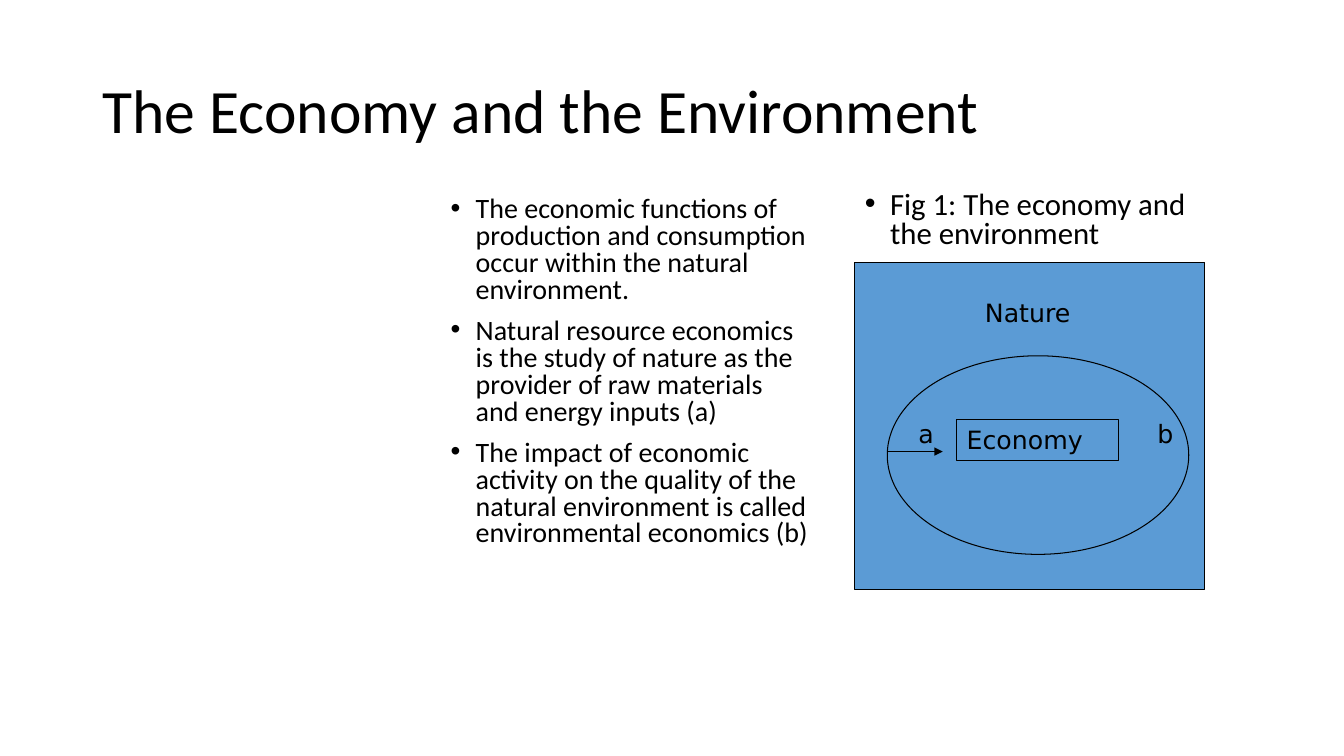
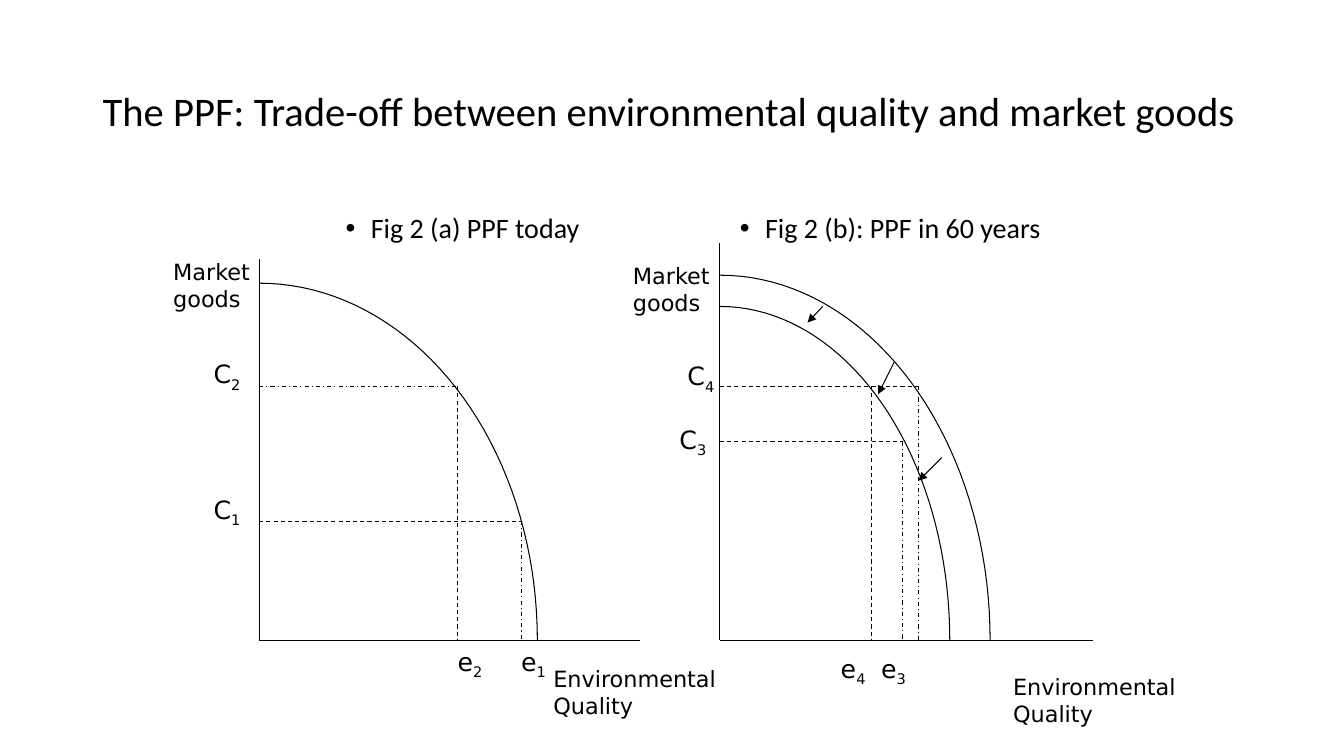
from math import cos, pi, sin

from lxml.etree import SubElement
from pptx import Presentation
from pptx.dml.color import RGBColor
from pptx.enum.dml import MSO_LINE
from pptx.enum.shapes import MSO_CONNECTOR, MSO_SHAPE
from pptx.enum.text import MSO_ANCHOR
from pptx.oxml.ns import qn
from pptx.util import Inches, Pt

BLACK = RGBColor(0x00, 0x00, 0x00)
BLUE = RGBColor(0x5B, 0x9B, 0xD5)
THIN = Pt(0.75)
DASH, DOT = MSO_LINE.DASH, MSO_LINE.DASH_DOT

TITLE = {"font": {"name": "Calibri"}, "para": {"line_spacing": 0.9}}
LABEL = {"font": {"name": "DejaVu Sans"}, "para": {}}
LOOSE = {"font": {"name": "Calibri"}, "bullet": True,
         "para": {"line_spacing": 0.9, "space_before": Pt(10)}}
TIGHT = {**LOOSE, "para": {**LOOSE["para"], "line_spacing": 0.8}}


def write(page, at, lines, size, style=LABEL, wrap=True):
    """Add a text box; an underscore in a line starts a subscript."""
    box = page.shapes.add_textbox(*map(Inches, at))
    frame = box.text_frame
    frame.word_wrap = wrap
    for i, line in enumerate(lines):
        para = frame.add_paragraph() if i else frame.paragraphs[0]
        for key, value in style["para"].items():
            setattr(para, key, value)
        if style.get("bullet"):
            props = para._p.get_or_add_pPr()
            props.set("marL", str(Inches(0.25)))
            props.set("indent", str(-Inches(0.25)))
            SubElement(props, qn("a:buFont")).set("typeface", "Arial")
            SubElement(props, qn("a:buChar")).set("char", "•")
        for j, part in enumerate(line.split("_")):
            run = para.add_run()
            run.text = part
            for key, value in {**style["font"], "size": Pt(size)}.items():
                setattr(run.font, key, value)
            run.font.color.rgb = BLACK
            if j:
                run._r.get_or_add_rPr().set("baseline", "-25000")
    return box


def rule(page, x1, y1, x2, y2, dash=None, arrow=False):
    """Draw a thin straight line, dashed or with an arrowhead if asked."""
    line = page.shapes.add_connector(
        MSO_CONNECTOR.STRAIGHT, *map(Inches, (x1, y1, x2, y2)))
    line.line.color.rgb = BLACK
    line.line.width = THIN
    if dash:
        line.line.dash_style = dash
    if arrow:
        SubElement(line.line._get_or_add_ln(), qn("a:tailEnd")).set("type", "triangle")
    SubElement(line._element.spPr, qn("a:effectLst"))


deck = Presentation()
deck.slide_width, deck.slide_height = Inches(13.33), Inches(7.5)

pages = []
for text, size in (
    ("The Economy and the Environment", 44),
    ("The PPF: Trade-off between environmental quality and market goods", 29),
):
    page = deck.slides.add_slide(deck.slide_layouts[6])
    title = write(page, (0.92, 0.4, 11.5, 1.45), [text], size, TITLE)
    title.text_frame.vertical_anchor = MSO_ANCHOR.MIDDLE
    pages.append(page)
nature, trade = pages

# Slide 1: the economy inside nature
write(nature, (4.37, 1.91, 3.76, 4.5), [
    "The economic functions of production and consumption occur within "
    "the natural environment.",
    "Natural resource economics is the study of nature as the provider of "
    "raw materials and energy inputs (a)",
    "The impact of economic activity on the quality of the natural "
    "environment is called environmental economics (b)",
], 20, TIGHT)
write(nature, (8.48, 1.85, 3.76, 4.5),
      ["Fig 1: The economy and the environment"], 22, TIGHT)

for kind, at in (
    (MSO_SHAPE.RECTANGLE, (8.48, 2.6, 3.47, 3.25)),
    (MSO_SHAPE.OVAL, (8.8, 3.53, 2.99, 1.97)),
):
    shape = nature.shapes.add_shape(kind, *map(Inches, at))
    shape.shadow.inherit = False
    shape.fill.solid()
    shape.fill.fore_color.rgb = BLUE
    shape.line.color.rgb = BLACK
    shape.line.width = THIN

write(nature, (9.67, 2.9, 1.65, 0.4), ["Nature"], 18)
core = write(nature, (9.49, 4.16, 1.6, 0.41), ["Economy"], 18)
core.line.color.rgb = BLACK
core.line.width = THIN
rule(nature, 8.8, 4.48, 9.35, 4.48, arrow=True)
for text, x in (("a", 9.01), ("b", 11.38)):
    write(nature, (x, 4.1, 0.35, 0.4), [text], 18, wrap=False)

# Slide 2: axes, frontiers and dashed guides of both graphs
BASE = 6.35
LEFT, RIGHT = 2.57, 7.14
STEPS = 40

for text, x in (("Fig 2 (a) PPF today", 3.33), ("Fig 2 (b): PPF in 60 years", 7.24)):
    write(trade, (x, 2.08, 3.76, 4.5), [text], 20, LOOSE)

for x, top, end in ((LEFT, 2.57, 6.35), (RIGHT, 2.41, 10.84)):
    rule(trade, x, top, x, BASE)
    rule(trade, x, BASE, end, BASE)

for x, wide, high in ((LEFT, 2.76, 3.54), (RIGHT, 2.68, 3.62), (RIGHT, 2.28, 3.31)):
    turns = [pi / 2 * i / STEPS for i in range(STEPS + 1)]
    spots = [(Inches(x + wide * sin(t)), Inches(BASE - high * cos(t))) for t in turns]
    path = trade.shapes.build_freeform(*spots[0])
    path.add_line_segments(spots[1:], close=False)
    curve = path.convert_to_shape()
    curve.shadow.inherit = False
    curve.fill.background()
    curve.line.color.rgb = BLACK
    curve.line.width = THIN

for start, x, y, across, down in (
    (LEFT, 4.54, 3.83, DOT, DASH),
    (LEFT, 5.17, 5.17, DASH, DOT),
    (RIGHT, 9.11, 3.83, DASH, DOT),
    (RIGHT, 8.95, 4.38, DASH, DOT),
):
    rule(trade, start, y, x, y, across)
    rule(trade, x, y, x, BASE, down)
rule(trade, 8.64, 3.83, 8.64, BASE, DASH)

for ends in ((8.16, 3.04, 8.01, 3.2), (9.34, 4.54, 9.11, 4.77), (8.87, 3.59, 8.71, 3.91)):
    rule(trade, *ends, arrow=True)

write(trade, (1.62, 2.51, 1.14, 0.64), ["Market goods"], 16)
write(trade, (6.18, 2.55, 1.06, 0.64), ["Market", "goods"], 16)
for x, y in ((5.39, 6.55), (9.95, 6.63)):
    write(trade, (x, y, 1.82, 0.64), ["Environmental", "Quality"], 16, wrap=False)

for text, x, y in (
    ("C_2", 2.02, 3.51), ("C_1", 2.02, 4.85),
    ("C_4", 6.72, 3.53), ("C_3", 6.64, 4.16),
    ("e_2", 4.44, 6.36), ("e_1", 5.07, 6.36),
    ("e_4", 8.24, 6.43), ("e_3", 8.64, 6.43),
):
    write(trade, (x, y, 0.48, 0.4), [text], 18, wrap=False)

deck.save("out.pptx")
